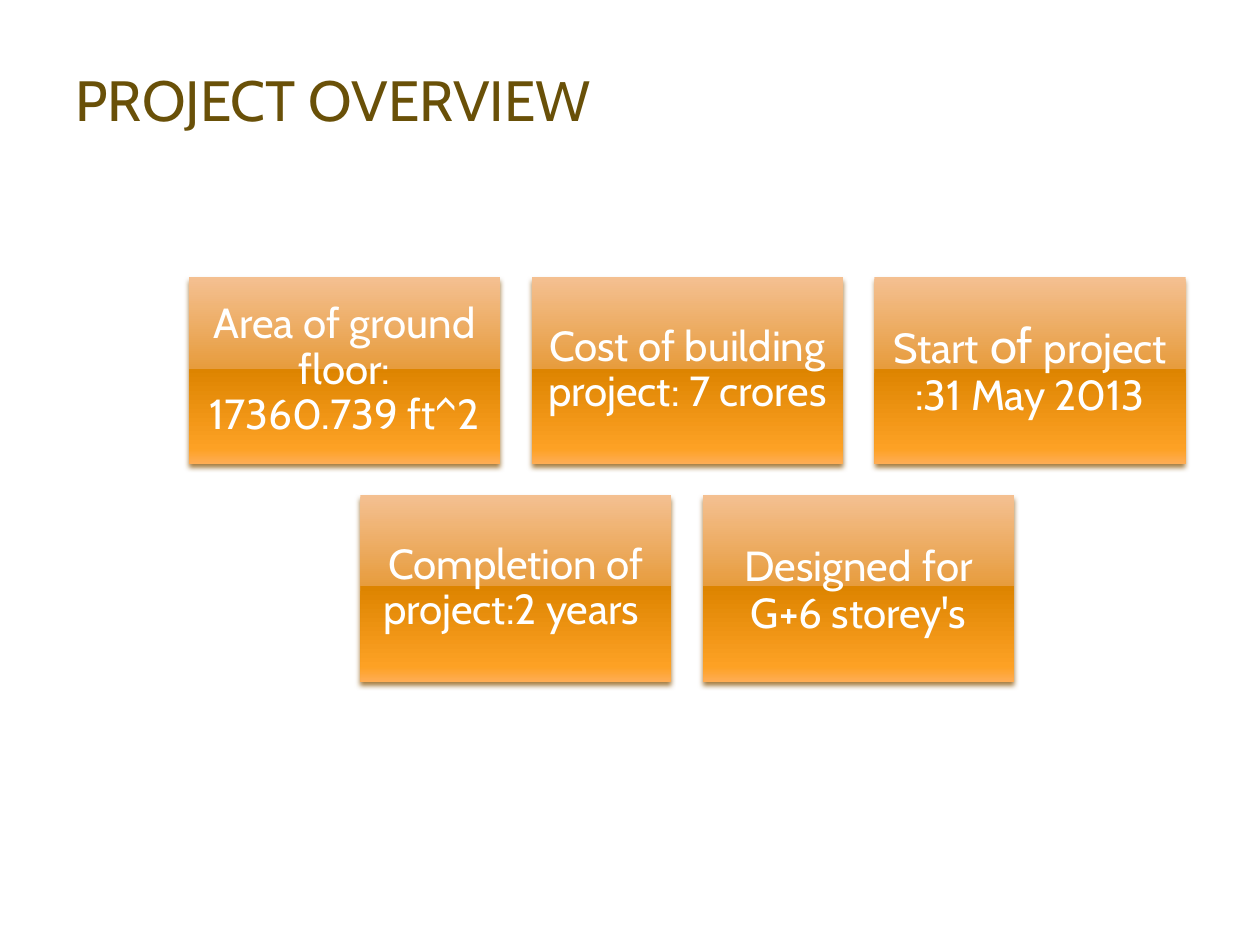
from pptx import Presentation
from pptx.dml.color import RGBColor
from pptx.enum.shapes import MSO_SHAPE
from pptx.enum.text import MSO_ANCHOR, PP_ALIGN
from pptx.oxml import parse_xml
from pptx.oxml.ns import nsdecls
from pptx.util import Inches, Pt

HUES = {
    "title": "695008", "text": "FFFFFF", "shade": "94641C",
    "pale": "F4C091", "tan": "E79C3D", "deep": "DD8400",
    "bright": "FDA124", "edge": "FFAD53",
}
STOPS = [(0, "pale"), (49, "tan"), (49, "deep"), (92, "bright"), (100, "edge")]
TILES = [
    (0, [
        [("Area of ground floor: 17360.739 ft^2", 24)],
        [("Cost of building project: 7 crores", 24)],
        [("Start", 24), (" of ", 28), ("project :31 May 2013", 24)],
    ]),
    (0.5, [
        [("Completion of project:2 years ", 24)],
        [("Designed", 24), (" ", 28), ("for G+6 storey's", 24)],
    ]),
]


def write(frame, parts, hue, align=PP_ALIGN.LEFT, inset=0.1, **form):
    frame.word_wrap = True
    frame.vertical_anchor = MSO_ANCHOR.MIDDLE
    for side in ("left", "top", "right", "bottom"):
        setattr(frame, f"margin_{side}", Inches(inset))
    para = frame.paragraphs[0]
    para.alignment = align
    for key, value in form.items():
        setattr(para, key, value)
    for text, size in parts:
        run = para.add_run()
        run.text = text
        run.font.name = "Cabin"
        run.font.size = Pt(size)
        run.font.color.rgb = RGBColor.from_string(HUES[hue])


class Deck:
    left, top = 1.5, 2.2
    wide, high = 2.47, 1.48
    gap = 0.25

    def __init__(self):
        self.show = Presentation()
        self.show.slide_width = Inches(10)
        self.show.slide_height = Inches(7.5)
        self.slide = self.show.slides.add_slide(self.show.slide_layouts[5])

    def title(self, text):
        head = self.slide.shapes.title
        head.left, head.top = Inches(0.5), Inches(0.5)
        head.width, head.height = Inches(9.25), Inches(0.57)
        write(head.text_frame, [(text, 32.4)], "title")

    def tile(self, col, row, parts):
        box = self.slide.shapes.add_shape(
            MSO_SHAPE.RECTANGLE,
            Inches(self.left + col * (self.wide + self.gap)),
            Inches(self.top + row * (self.high + self.gap)),
            Inches(self.wide), Inches(self.high))
        box.line.fill.background()
        self.shine(box)
        self.shade(box)
        write(box.text_frame, parts, "text", PP_ALIGN.CENTER,
              line_spacing=0.9, space_after=Pt(8.4))

    def shine(self, box):
        stops = "".join(
            f'<a:gs pos="{at * 1000}"><a:srgbClr val="{HUES[hue]}"/></a:gs>'
            for at, hue in STOPS)
        fill = parse_xml(
            f'<a:gradFill {nsdecls("a")} rotWithShape="1"><a:gsLst>{stops}</a:gsLst>'
            '<a:lin ang="5400000" scaled="0"/></a:gradFill>')
        box.line._get_or_add_ln().addprevious(fill)

    def shade(self, box):
        box.shadow.inherit = False
        box._element.spPr[-1].append(parse_xml(
            f'<a:outerShdw {nsdecls("a")} blurRad="{Pt(3.1)}" dist="{Pt(2)}" '
            'dir="5400000" rotWithShape="0">'
            f'<a:srgbClr val="{HUES["shade"]}"><a:alpha val="83000"/></a:srgbClr>'
            '</a:outerShdw>'))


def main():
    deck = Deck()
    deck.title("PROJECT OVERVIEW")
    for row, (shift, tiles) in enumerate(TILES):
        for col, parts in enumerate(tiles):
            deck.tile(col + shift, row, parts)
    deck.show.save("out.pptx")


if __name__ == "__main__":
    main()
